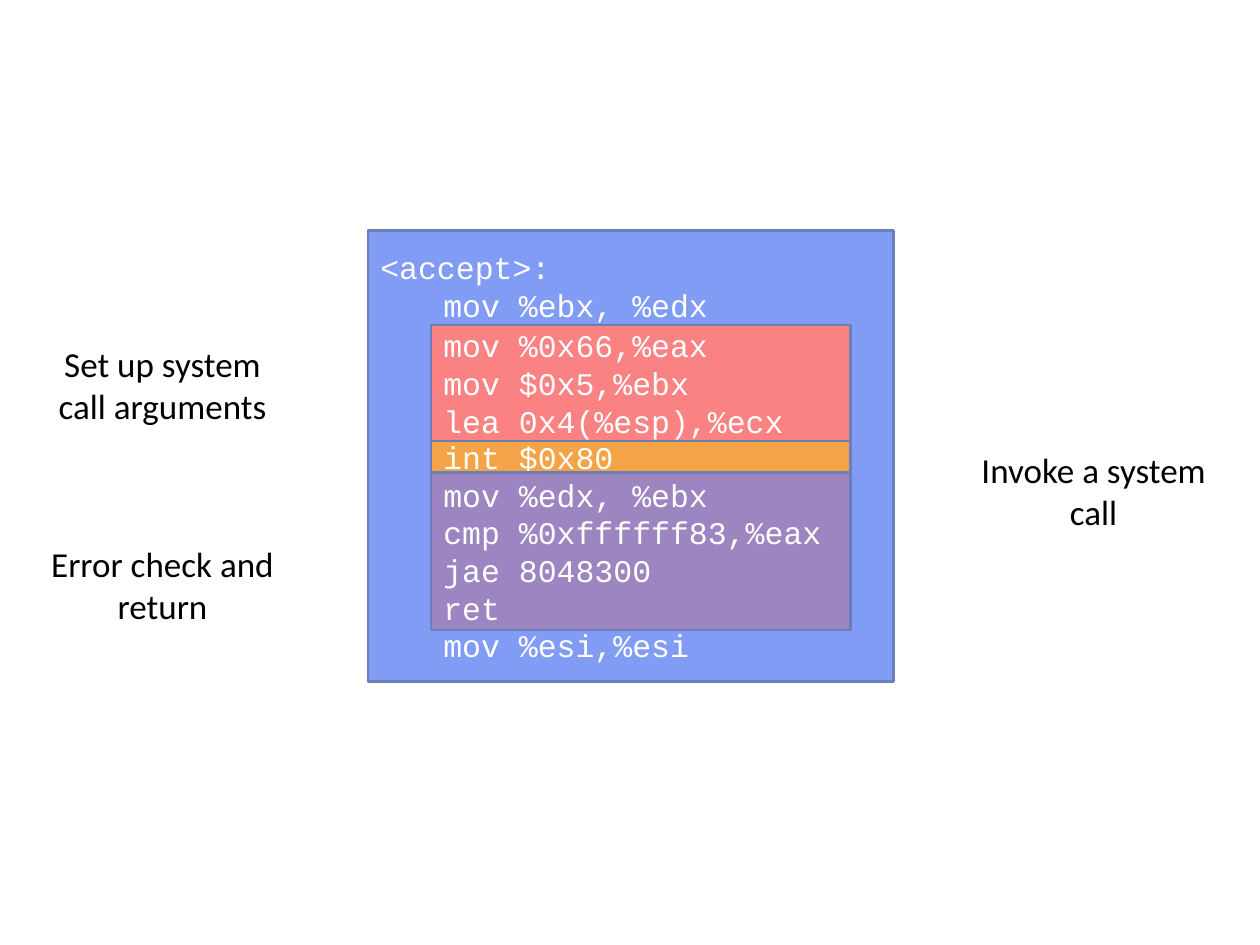
"""Build a slide that marks the stages of the accept system call in its assembly code."""
from pptx import Presentation
from pptx.dml.color import RGBColor
from pptx.enum.shapes import MSO_SHAPE
from pptx.enum.text import MSO_ANCHOR, MSO_AUTO_SIZE, PP_ALIGN
from pptx.util import Inches, Pt

RECTANGLE = MSO_SHAPE.RECTANGLE
MIDDLE = MSO_ANCHOR.MIDDLE
FIT_SHAPE = MSO_AUTO_SIZE.SHAPE_TO_FIT_TEXT
LEFT, CENTER = PP_ALIGN.LEFT, PP_ALIGN.CENTER

COLORS = {
    "listing": "809CF4", "setup": "FA8282", "invoke": "F3A447",
    "check": "9C85C0", "border": "6C7EB6", "code": "FFFFFF", "label": "000000",
}
HEADING = "<accept>:"
FIRST = ["mov %ebx, %edx"]
LAST = ["mov %esi,%esi"]
STAGES = [
    {"color": "setup", "height": 0.92,
     "lines": ["mov %0x66,%eax", "mov $0x5,%ebx", "lea 0x4(%esp),%ecx"],
     "label": "Set up system call arguments", "label_at": (0.25, 2.67, 2.08)},
    {"color": "invoke", "height": 0.25,
     "lines": ["int $0x80"],
     "label": "Invoke a system call", "label_at": (7.53, 3.51, 2.3)},
    {"color": "check", "height": 1.25,
     "lines": ["mov %edx, %ebx", "cmp %0xffffff83,%eax", "jae 8048300", "ret"],
     "label": "Error check and return", "label_at": (0.14, 4.26, 2.3)},
]
LISTING_AT = (2.92, 1.83, 4.17, 3.58)
STAGE_LEFT, STAGE_TOP, STAGE_WIDTH = 3.42, 2.58, 3.33
LABEL_HEIGHT = 0.77


def rgb(name):
    return RGBColor.from_string(COLORS[name])


def write_lines(frame, lines, font, size, color, alignment):
    """Write (text, level) pairs as equally styled paragraphs."""
    frame.word_wrap = True
    for index, (text, level) in enumerate(lines):
        para = frame.paragraphs[0] if index == 0 else frame.add_paragraph()
        para.text = text
        para.level = level
        para.alignment = alignment
        para.font.name = font
        para.font.size = Pt(size)
        para.font.color.rgb = rgb(color)


def add_code_box(slide, position, color, lines):
    """Add a bordered rectangle that holds lines of code."""
    box = slide.shapes.add_shape(RECTANGLE, *map(Inches, position))
    box.shadow.inherit = False
    box.fill.solid()
    box.fill.fore_color.rgb = rgb(color)
    box.line.color.rgb = rgb("border")
    box.line.width = Pt(1.5)
    box.text_frame.vertical_anchor = MIDDLE
    write_lines(box.text_frame, lines, "Courier New", 18, "code", LEFT)


def add_label(slide, position, text):
    """Add a centred caption for one stage."""
    box = slide.shapes.add_textbox(*map(Inches, (*position, LABEL_HEIGHT)))
    write_lines(box.text_frame, [(text, 0)], "Calibri", 20, "label", CENTER)
    box.text_frame.auto_size = FIT_SHAPE


def main():
    """Build and save the deck."""
    deck = Presentation()
    deck.slide_width, deck.slide_height = Inches(10), Inches(7.5)
    slide = deck.slides.add_slide(deck.slide_layouts[6])

    body = FIRST + [line for stage in STAGES for line in stage["lines"]] + LAST
    listing = [(HEADING, 0)] + [(line, 1) for line in body]
    add_code_box(slide, LISTING_AT, "listing", listing)

    top = STAGE_TOP
    for stage in STAGES:
        position = (STAGE_LEFT, top, STAGE_WIDTH, stage["height"])
        add_code_box(slide, position, stage["color"], [(line, 0) for line in stage["lines"]])
        add_label(slide, stage["label_at"], stage["label"])
        top += stage["height"]

    deck.save("out.pptx")


if __name__ == "__main__":
    main()
